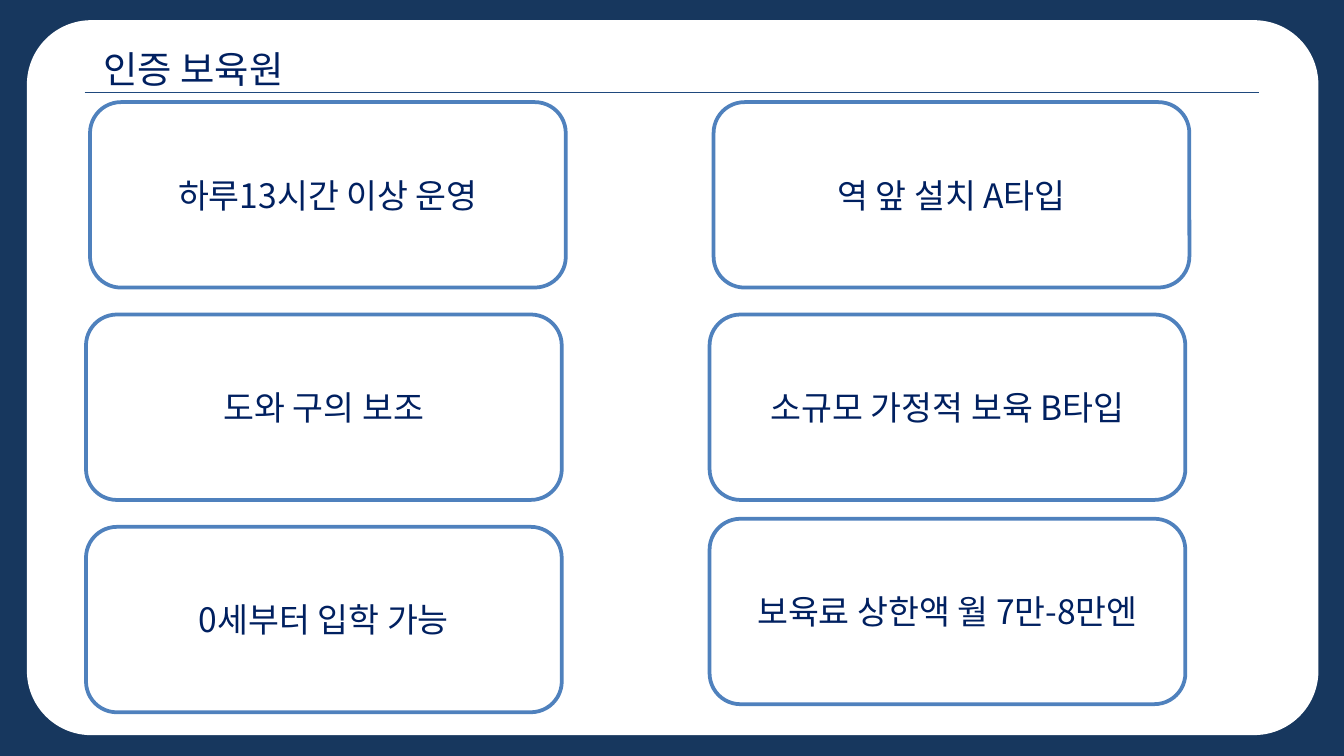
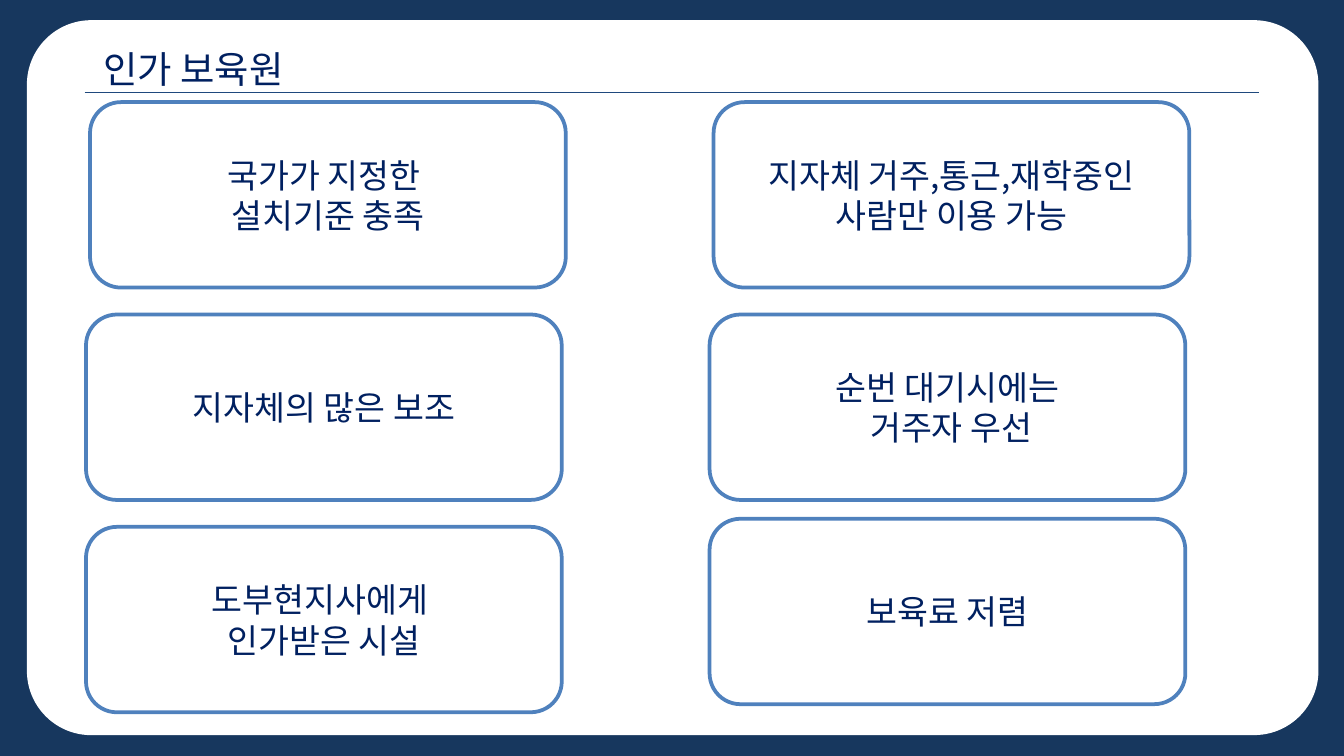
from pptx import Presentation
from pptx.dml.color import RGBColor
from pptx.enum.shapes import MSO_CONNECTOR, MSO_SHAPE
from pptx.enum.text import MSO_ANCHOR, MSO_AUTO_SIZE, PP_ALIGN
from pptx.oxml import parse_xml
from pptx.oxml.ns import nsdecls
from pptx.util import Inches, Pt

ROUND, STRAIGHT = MSO_SHAPE.ROUNDED_RECTANGLE, MSO_CONNECTOR.STRAIGHT
TOP, MIDDLE = MSO_ANCHOR.TOP, MSO_ANCHOR.MIDDLE
LEFT, CENTER = PP_ALIGN.LEFT, PP_ALIGN.CENTER
NO_FIT, GROW = MSO_AUTO_SIZE.NONE, MSO_AUTO_SIZE.SHAPE_TO_FIT_TEXT

WIDTH, COLUMNS = 10, 100
HEIGHT = WIDTH * 9 / 16
FONT = "Noto Sans CJK KR"
NAVY, WHITE, INK, RULE, EDGE = "17375E", "FFFFFF", "002060", "1F497D", "4F81BD"

CARD_W, CARD_H = 35.4, 13.8
CARD_LEFT, CARD_TOP = 6.7, 7.6
STEP_X, STEP_Y = 46.4, 15.8
LOWER_SHIFT, LAST_RAISE = 0.3, 0.6

SLIDES = [
    ("인증 보육원", [
        ("하루13시간 이상 운영", "역 앞 설치 A타입"),
        ("도와 구의 보조", "소규모 가정적 보육 B타입"),
        ("0세부터 입학 가능", "보육료 상한액 월 7만-8만엔"),
    ]),
    ("인가 보육원", [
        ("국가가 지정한 \n설치기준 충족", "지자체 거주,통근,재학중인 사람만 이용 가능"),
        ("지자체의 많은 보조", "순번 대기시에는\n 거주자 우선"),
        ("도부현지사에게 \n인가받은 시설", "보육료 저렴"),
    ]),
]


def rgb(value):
    return RGBColor.from_string(value)


def grid(*units):
    return [Inches(WIDTH * u / COLUMNS) for u in units]


def apply(target, values):
    for name, value in values.items():
        setattr(target, name, value)


class Deck:
    def __init__(self):
        self.prs = Presentation()
        apply(self.prs, {"slide_width": Inches(WIDTH), "slide_height": Inches(HEIGHT)})
        fill = self.prs.slide_master.background.fill
        fill.solid()
        fill.fore_color.rgb = rgb(NAVY)
        self.s = None

    def slide(self, title):
        self.s = self.prs.slides.add_slide(self.prs.slide_layouts[5])
        sp = self.s.shapes.title
        apply(sp, dict(zip(("left", "top", "width", "height"), grid(6.7, 2.9, 35.4, 4.4))))
        self.text(sp, title, 20, LEFT, TOP, GROW)

    def text(self, sp, text, size, align, anchor, fit):
        tf = sp.text_frame
        tf.text = text
        apply(tf, {"word_wrap": True, "vertical_anchor": anchor, "auto_size": fit})
        for p in tf.paragraphs:
            p.alignment = align
            for r in p.runs:
                apply(r.font, {"name": FONT, "size": Pt(size)})
                r.font.color.rgb = rgb(INK)
                ea = parse_xml(f'<a:ea {nsdecls("a")} typeface="{FONT}"/>')
                r.font._element.append(ea)

    def panel(self, x, y, w, h, edge=None, corner=None):
        sp = self.s.shapes.add_shape(ROUND, *grid(x, y, w, h))
        sp.shadow.inherit = False
        sp.fill.solid()
        sp.fill.fore_color.rgb = rgb(WHITE)
        if corner is not None:
            sp.adjustments[0] = corner
        if edge:
            sp.line.color.rgb = rgb(edge)
            sp.line.width = Pt(2)
        else:
            sp.line.fill.background()
        return sp

    def rule(self, x1, x2, y):
        line = self.s.shapes.add_connector(STRAIGHT, *grid(x1, y, x2, y))
        line.line.color.rgb = rgb(RULE)
        line.line.width = Pt(0.75)
        line._element.spPr.append(parse_xml(f'<a:effectLst {nsdecls("a")}/>'))
        return line

    def card(self, row, col, text):
        x = CARD_LEFT + col * STEP_X - (LOWER_SHIFT if row else 0)
        y = CARD_TOP + row * STEP_Y - (LAST_RAISE if (row, col) == (2, 1) else 0)
        sp = self.panel(x, y, CARD_W, CARD_H, EDGE)
        self.text(sp, text, 18, CENTER, MIDDLE, NO_FIT)

    def share(self, shapes):
        tree = self.prs.slide_master.shapes._spTree
        for i, shape in enumerate(shapes):
            shape._element.xpath(".//p:cNvPr")[0].set("id", str(101 + i))
            tree.insert(2 + i, shape._element)


def main():
    deck = Deck()
    for title, rows in SLIDES:
        deck.slide(title)
        if len(deck.prs.slides) == 1:
            deck.share([deck.panel(2, 1.5, 96.1, 53.2, corner=0.09),
                        deck.rule(6.3, 93.7, 6.9)])
        for col in range(2):
            for row, texts in enumerate(rows):
                deck.card(row, col, texts[col])
    deck.prs.save("out.pptx")


if __name__ == "__main__":
    main()
